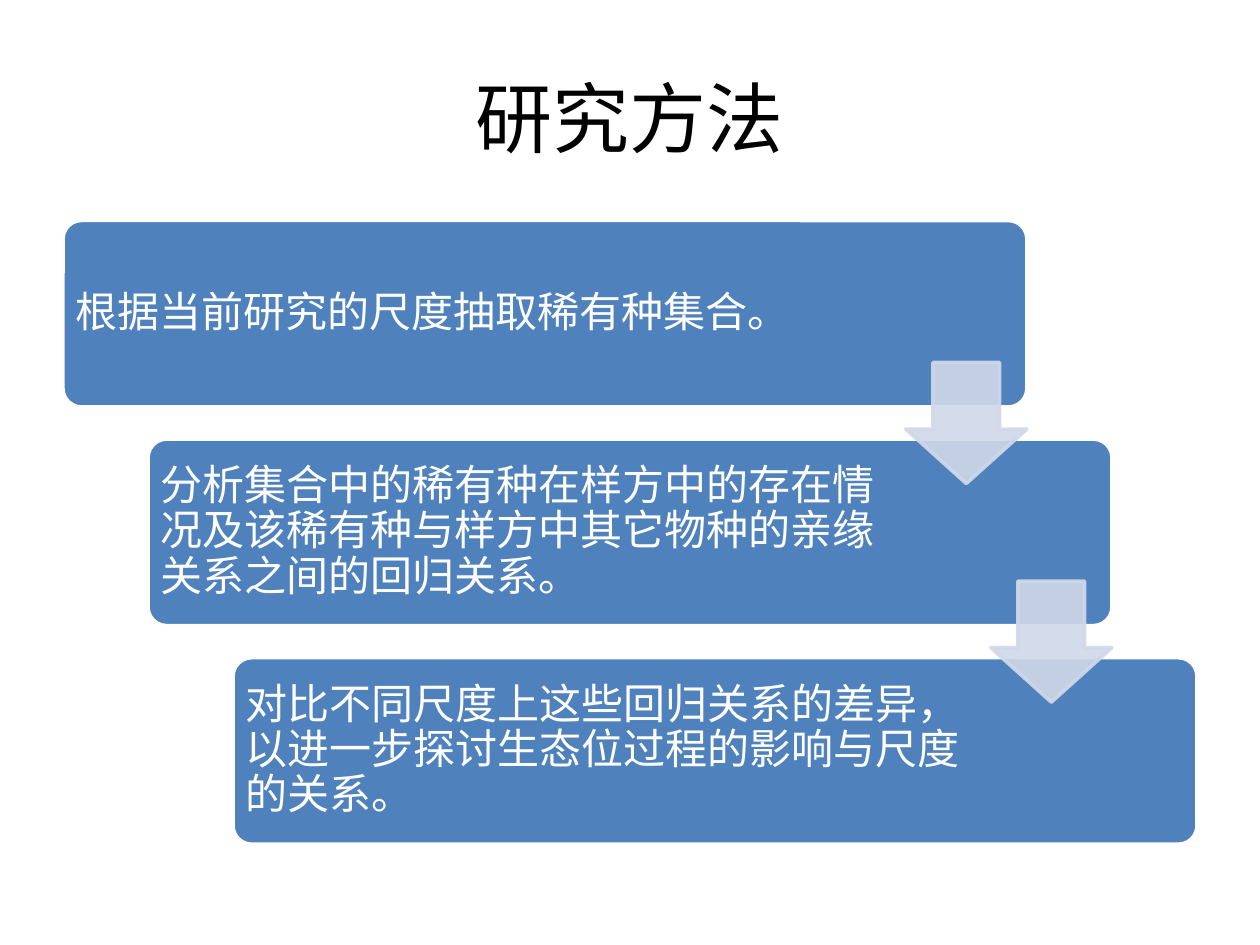
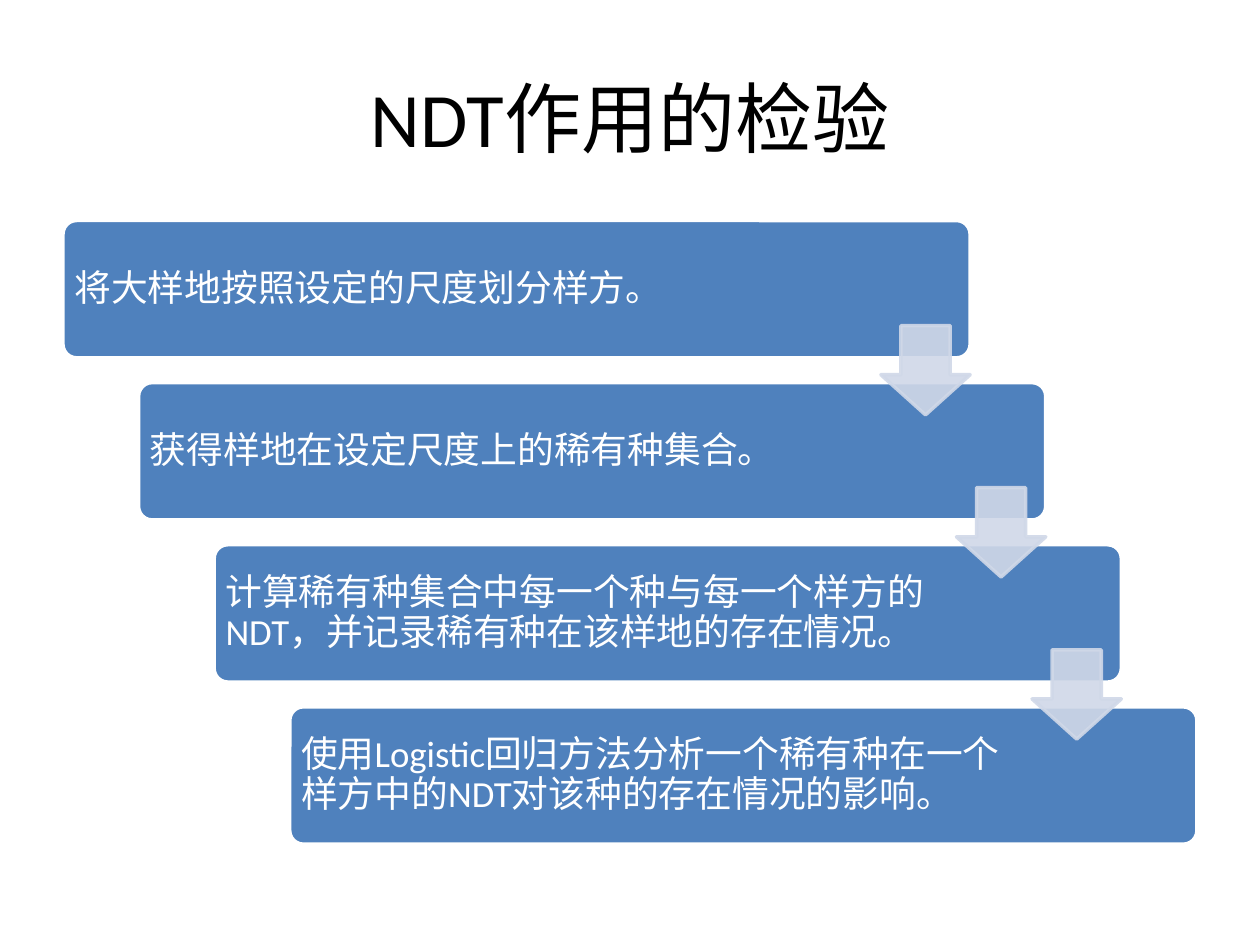
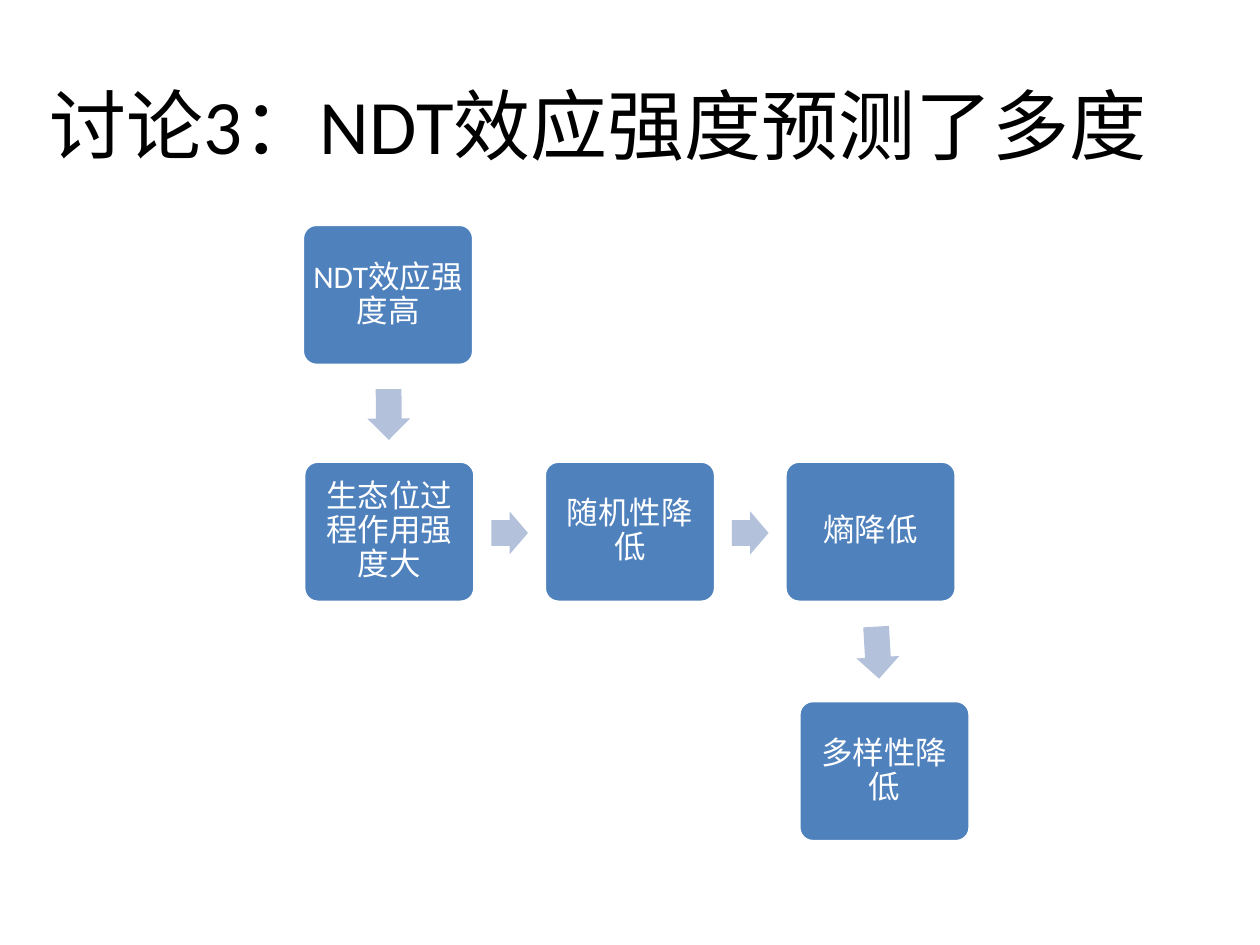
from math import atan2, degrees

from lxml import etree
from pptx import Presentation
from pptx.dml.color import RGBColor
from pptx.enum.shapes import MSO_SHAPE
from pptx.enum.text import MSO_ANCHOR, PP_ALIGN
from pptx.oxml.ns import qn
from pptx.util import Pt

ROUND_RECT = MSO_SHAPE.ROUNDED_RECTANGLE
DOWN_ARROW = MSO_SHAPE.DOWN_ARROW
RIGHT_ARROW = MSO_SHAPE.RIGHT_ARROW
MIDDLE = MSO_ANCHOR.MIDDLE
LEFT, CENTER = PP_ALIGN.LEFT, PP_ALIGN.CENTER

EMU_PER_PX = 9144  # 100 px to the inch
TITLE_ONLY = 5

# Area that every staircase fills
STAIRS_LEFT, STAIRS_TOP, STAIRS_WIDTH, STAIRS_HEIGHT = 50, 175, 900, 495
# Box size of the cause chain
BOX_W, BOX_H = 136, 112


def px(length):
    return round(length * EMU_PER_PX)


def color(hex_string):
    return RGBColor.from_string(hex_string)


class Deck:
    FONT = "Calibri"
    INK, PAPER = "000000", "FFFFFF"
    BLUE, PALE, SOFT = "4F81BD", "D0D8E8", "B3C1DB"
    CORNER = 0.1

    def __init__(self):
        self.prs = Presentation()
        self.prs.slide_width, self.prs.slide_height = px(1000), px(750)
        self.slide = None

    def set_text(self, frame, text, size, ink, align):
        frame.text = text
        frame.word_wrap = True
        frame.vertical_anchor = MIDDLE
        paragraph = frame.paragraphs[0]
        paragraph.alignment = align
        font = paragraph.runs[0].font
        font.name, font.size, font.color.rgb = self.FONT, Pt(size), color(ink)
        return paragraph

    def new_slide(self, title, left=50, top=30, width=900):
        self.slide = self.prs.slides.add_slide(self.prs.slide_layouts[TITLE_ONLY])
        heading = self.slide.shapes.title
        heading.left, heading.top = px(left), px(top)
        heading.width, heading.height = px(width), px(125)
        self.set_text(heading.text_frame, title, 44, self.INK, CENTER)

    def shape(self, kind, left, top, width, height, adjustments, fill, line=None):
        shape = self.slide.shapes.add_shape(
            kind, px(left), px(top), px(width), px(height))
        shape.shadow.inherit = False
        for index, value in enumerate(adjustments):
            shape.adjustments[index] = value
        shape.fill.solid()
        shape.fill.fore_color.rgb = color(fill)
        if line:
            shape.line.color.rgb = color(line)
            shape.line.width = Pt(2)
        else:
            shape.line.fill.background()
        return shape

    def box(self, left, top, width, height, text, size, inset, align, spare=0):
        """Rounded box; spare is the strip on the right kept free of text."""
        box = self.shape(ROUND_RECT, left, top, width, height,
                         [self.CORNER], self.BLUE, self.PAPER)
        # The rounded corners already push the text in by 29% of their radius
        margin = px(inset - 0.29 * self.CORNER * height)
        frame = box.text_frame
        frame.margin_left = frame.margin_top = frame.margin_bottom = margin
        frame.margin_right = margin + px(spare)
        self.set_text(frame, text, size, self.PAPER, align).line_spacing = 0.9

    def step_arrow(self, left, top, size):
        arrow = self.shape(DOWN_ARROW, left, top, size, size,
                           [0.55, 0.45], self.PALE, self.PALE)
        for tint in arrow.element.spPr.iter(qn("a:srgbClr")):
            etree.SubElement(tint, qn("a:alpha")).set("val", "90000")

    def staircase(self, steps, width, height, text_width, size, inset):
        intervals = len(steps) - 1
        run = (STAIRS_WIDTH - width) / intervals
        rise = (STAIRS_HEIGHT - height) / intervals
        corners = [(STAIRS_LEFT + i * run, STAIRS_TOP + i * rise)
                   for i in range(len(steps))]
        for (left, top), text in zip(corners, steps):
            self.box(left, top, width, height, text, size, inset, LEFT,
                     spare=width - text_width)
        # Arrows end flush with the upper step, centred on the gap below it
        arrow = 0.65 * height
        for left, top in corners[:-1]:
            self.step_arrow(left + width - arrow,
                            top + (height + rise - arrow) / 2, arrow)

    def chain_arrow(self, start, end):
        """Arrow in the gap between two chain boxes, pointing to the second."""
        dx, dy = end[0] - start[0], end[1] - start[1]
        gap = max(abs(dx) - BOX_W, abs(dy) - BOX_H)
        length, thickness = 0.53 * gap, 34
        center_x = start[0] + (BOX_W + dx) / 2
        center_y = start[1] + (BOX_H + dy) / 2 + 1
        arrow = self.shape(RIGHT_ARROW, center_x - length / 2,
                           center_y - thickness / 2, length, thickness,
                           [0.6, 0.5], self.SOFT)
        arrow.rotation = degrees(atan2(dy, dx))

    def chain(self, links):
        for left, top, text in links:
            self.box(left, top, BOX_W, BOX_H, text, 18, 7, CENTER)
        for start, end in zip(links, links[1:]):
            self.chain_arrow(start, end)


def main():
    deck = Deck()

    # Research method
    deck.new_slide("研究方法")
    deck.staircase([
        "根据当前研究的尺度抽取稀有种集合。",
        "分析集合中的稀有种在样方中的存在情况及该稀有种与样方中其它物种的亲缘关系之间的回归关系。",
        "对比不同尺度上这些回归关系的差异，以进一步探讨生态位过程的影响与尺度的关系。",
    ], width=765, height=148, text_width=601, size=24, inset=10)

    # Test of the NDT effect
    deck.new_slide("NDT作用的检验")
    deck.staircase([
        "将大样地按照设定的尺度划分样方。",
        "获得样地在设定尺度上的稀有种集合。",
        "计算稀有种集合中每一个种与每一个样方的NDT，并记录稀有种在该样地的存在情况。",
        "使用Logistic回归方法分析一个稀有种在一个样方中的NDT对该种的存在情况的影响。",
    ], width=720, height=109, text_width=590, size=21, inset=9)

    # Discussion: from NDT strength to diversity
    deck.new_slide("讨论3：NDT效应强度预测了多度", left=0, top=36, width=950)
    row_left, row_top, pitch = 241, 366, 191
    deck.chain([
        (240, 178, "NDT效应强度高"),
        (row_left, row_top, "生态位过程作用强度大"),
        (row_left + pitch, row_top, "随机性降低"),
        (row_left + 2 * pitch, row_top, "熵降低"),
        (634, 556, "多样性降低"),
    ])

    deck.prs.save("out.pptx")


if __name__ == "__main__":
    main()
